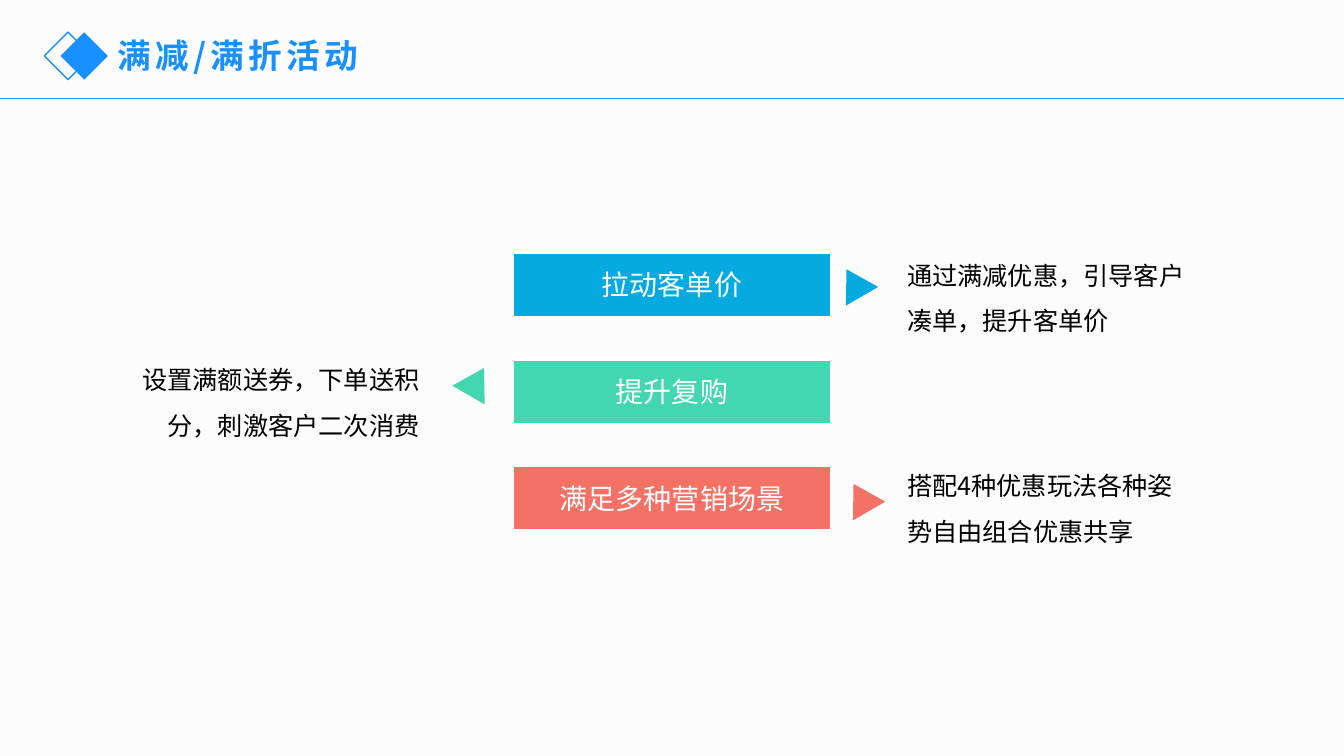
from pptx import Presentation
from pptx.dml.color import RGBColor
from pptx.enum.shapes import MSO_CONNECTOR, MSO_SHAPE
from pptx.enum.text import MSO_ANCHOR, MSO_AUTO_SIZE, PP_ALIGN
from pptx.oxml.ns import qn
from pptx.util import Inches, Pt

PAPER = RGBColor(0xFC, 0xFC, 0xFC)
WHITE = RGBColor(0xFF, 0xFF, 0xFF)
BLACK = RGBColor(0x00, 0x00, 0x00)
TITLE_BLUE = RGBColor(0x18, 0x90, 0xFF)
RULE_BLUE = RGBColor(0x00, 0xAD, 0xFF)
BLUE = RGBColor(0x05, 0xAA, 0xE0)
GREEN = RGBColor(0x42, 0xD6, 0xB1)
RED = RGBColor(0xF3, 0x72, 0x65)

FONT = "Noto Sans CJK SC"
COLUMNS, ROWS = 160, 90
LEFT, CENTER, RIGHT = PP_ALIGN.LEFT, PP_ALIGN.CENTER, PP_ALIGN.RIGHT

BENEFITS = [
    ("拉动客单价", BLUE, (99.48, 31.8), 330,
     "通过满减优惠，引导客户凑单，提升客单价", (106.8, 28.56, 37.08), LEFT),
    ("提升复购", GREEN, (54.48, 43.56), 30,
     "设置满额送券，下单送积分，刺激客户二次消费", (15.24, 41.04, 35.88), RIGHT),
    ("满足多种营销场景", RED, (100.32, 57.36), 330,
     "搭配4种优惠玩法各种姿势自由组合优惠共享", (106.8, 53.64, 34.2), LEFT),
]


def write(shape, text, size=18, color=BLACK, bold=False, align=LEFT,
          line_spacing=1.0, tracking=0, anchor=MSO_ANCHOR.TOP):
    frame = shape.text_frame
    frame.word_wrap = True
    frame.vertical_anchor = anchor
    para = frame.paragraphs[0]
    para.alignment = align
    para.line_spacing = line_spacing
    span = para.add_run()
    span.text = text
    span.font.name = FONT
    span.font.size = Pt(size)
    span.font.bold = bold
    span.font.color.rgb = color
    properties = span.font._element
    properties.get_or_change_to_solidFill()
    east_asian = properties.makeelement(qn("a:ea"), {"typeface": FONT})
    properties.find(qn("a:latin")).addnext(east_asian)
    if tracking:
        properties.set("spc", str(tracking * 100))


class SlideBuilder:
    def __init__(self, deck):
        self.cell_width = deck.slide_width / COLUMNS
        self.cell_height = deck.slide_height / ROWS
        self.page = deck.slides.add_slide(deck.slide_layouts[5])
        self.page.background.fill.solid()
        self.page.background.fill.fore_color.rgb = PAPER

    def place(self, column, row, columns, rows):
        return (round(column * self.cell_width), round(row * self.cell_height),
                round(columns * self.cell_width), round(rows * self.cell_height))

    def title(self, text, *area):
        box = self.page.shapes.title
        box.left, box.top, box.width, box.height = self.place(*area)
        write(box, text, size=24, color=TITLE_BLUE, bold=True, tracking=3,
              anchor=MSO_ANCHOR.MIDDLE)

    def rule(self, row, color):
        left, top, width, _ = self.place(0, row, COLUMNS, 0)
        line = self.page.shapes.add_connector(
            MSO_CONNECTOR.STRAIGHT, left, top, left + width, top)
        line.line.color.rgb = color
        line.line.width = Pt(1)
        properties = line._element.spPr
        properties.append(properties.makeelement(qn("a:effectLst"), {}))

    def shape(self, kind, *area, fill=None, outline=None, rotation=0):
        shape = self.page.shapes.add_shape(kind, *self.place(*area))
        shape.shadow.inherit = False
        shape.rotation = rotation
        if fill is None:
            shape.fill.background()
        else:
            shape.fill.solid()
            shape.fill.fore_color.rgb = fill
        if outline is None:
            shape.line.fill.background()
        else:
            shape.line.color.rgb = outline
            shape.line.width = Pt(1)
        return shape

    def text(self, text, *area, **style):
        box = self.page.shapes.add_textbox(*self.place(*area))
        write(box, text, **style)
        box.text_frame.auto_size = MSO_AUTO_SIZE.SHAPE_TO_FIT_TEXT


def main():
    deck = Presentation()
    deck.slide_width = Inches(13.33)
    deck.slide_height = Inches(7.5)
    slide = SlideBuilder(deck)

    slide.rule(11.76, RULE_BLUE)
    slide.shape(MSO_SHAPE.DIAMOND, 5.28, 3.84, 5.64, 5.64, outline=TITLE_BLUE)
    slide.shape(MSO_SHAPE.DIAMOND, 7.2, 3.84, 5.64, 5.64, fill=TITLE_BLUE)
    slide.title("满减/满折活动", 12.84, 3.6, 65.88, 6)

    for index, benefit in enumerate(BENEFITS):
        label, color, arrow, rotation, detail, detail_area, align = benefit
        bar = slide.shape(MSO_SHAPE.RECTANGLE, 61.1, 30.12 + index * 12.72,
                          37.8, 7.56, fill=color, outline=WHITE)
        write(bar, label, size=20, color=WHITE, align=CENTER,
              anchor=MSO_ANCHOR.MIDDLE)
        slide.shape(MSO_SHAPE.ISOSCELES_TRIANGLE, *arrow, 4.44, 3.72,
                    fill=color, rotation=rotation)
        slide.text(detail, *detail_area, 11.28, align=align, line_spacing=1.5)

    deck.save("out.pptx")


if __name__ == "__main__":
    main()
